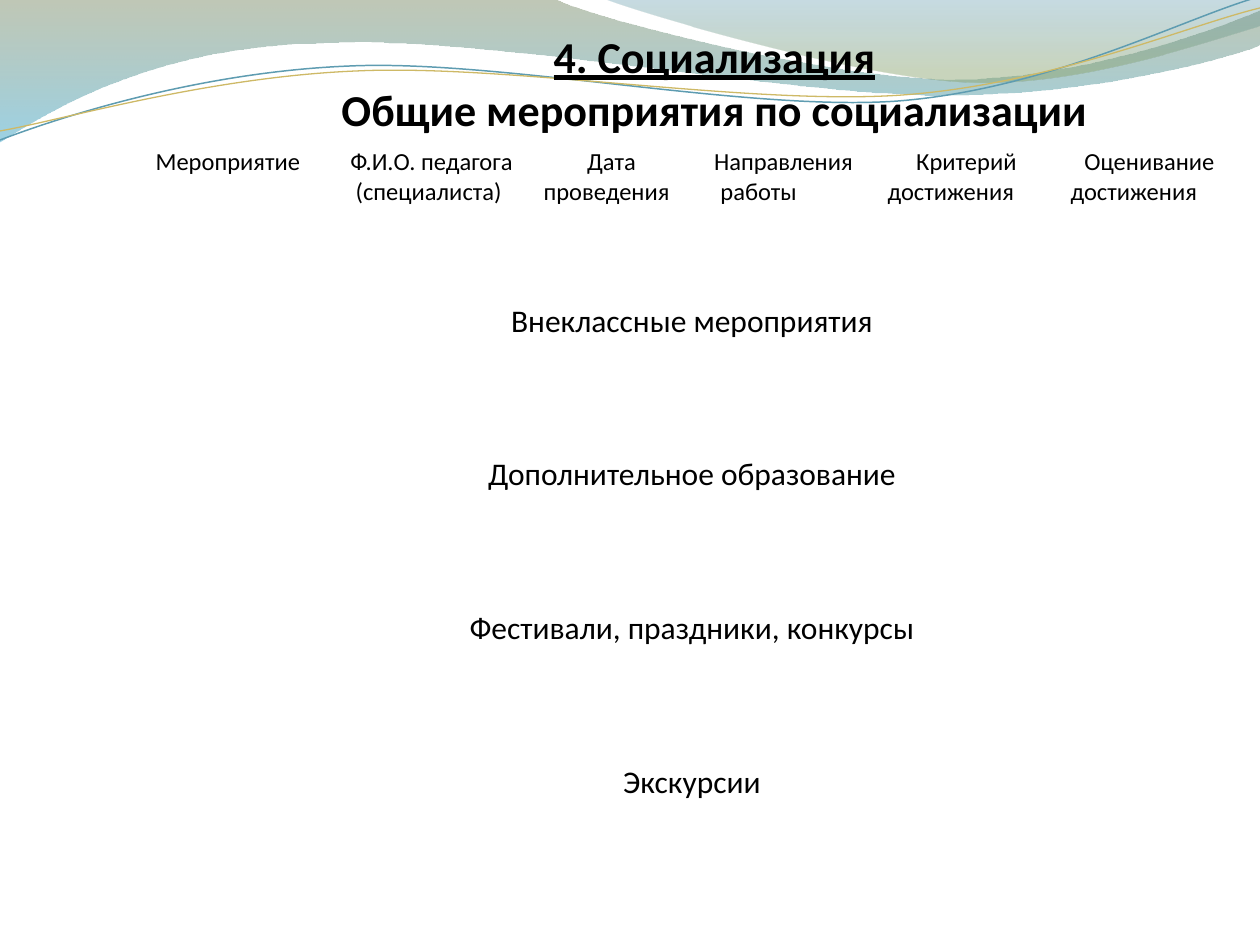
"""Builds the slide with general socialization activities under a wave header."""
from itertools import chain
from lxml.etree import SubElement
from pptx import Presentation
from pptx.dml.color import RGBColor
from pptx.enum.text import MSO_ANCHOR, PP_ALIGN
from pptx.oxml.ns import qn
from pptx.util import Pt

SCALE = 914400 / 126

TITLE_LINES = [("4. Социализация", True), ("Общие мероприятия по социализации", False)]
TITLE_BOX = (198, 35, 1033, 100)
HEADERS = [
    (189, "Мероприятие\t"),
    (199, "Ф.И.О. педагога (специалиста) "),
    (161, "Дата проведения \t"),
    (183, "Направления работы \t"),
    (183, "Критерий достижения \t"),
    (183, "Оценивание достижения \t"),
]
ACTIVITIES = [
    "Внеклассные мероприятия",
    "Дополнительное образование",
    "Фестивали, праздники, конкурсы",
    "Экскурсии",
]
TABLE_LEFT, TABLE_TOP, ROW_HEIGHTS = 143, 141, (155, 622)

BANDS = [
    ([[(0, 0)], [(554, -1)],
      [(600, 21), (837, 79), (955, 79)], [(1075, 79), (1207, 33), (1260, 11)],
      [(1261, 45)],
      [(1239, 55), (1096, 96), (940, 95)], [(784, 95), (481, 35), (324, 43)],
      [(163, 45), (58, 105), (-1, 142)]],
     [(0, "74855E", 45), (100, "4AACCE", 55)]),
    ([[(604, -1)],
      [(641, 14), (859, 78), (969, 82)], [(1079, 87), (1211, 40), (1260, 26)],
      [(1260, 0)]],
     [(0, "45889F", 30), (80, "8AA36D", 45)]),
]
WAVES = [
    ([[(0, 140)], [(60, 117), (199, 72), (349, 66)],
      [(498, 59), (747, 112), (898, 101)], [(1050, 89), (1182, 19), (1258, -3)]],
     "5E9CB1", 0.85),
    ([[(0, 131)], [(59, 121), (207, 77), (357, 71)],
      [(508, 64), (752, 106), (903, 95)], [(1053, 84), (1186, 26), (1260, 8)]],
     "CEB966", 0.75),
]


def px(value):
    return round(value * SCALE)


def color(code):
    return RGBColor.from_string(code)


def add_outline(page, segments, close):
    start, *points = chain.from_iterable(segments)
    builder = page.shapes.build_freeform(*start, scale=SCALE)
    builder.add_line_segments(points, close=close)
    shape = builder.convert_to_shape()
    shape.shadow.inherit = False
    nodes = iter(list(shape._element.iter(qn("a:lnTo"))))
    for segment in segments[1:]:
        steps = [next(nodes) for _ in segment]
        if len(steps) == 3:
            curve = SubElement(steps[0].getparent(), qn("a:cubicBezTo"))
            steps[0].addprevious(curve)
            for step in steps:
                curve.append(step[0])
                step.getparent().remove(step)
    return shape


def add_band(page, segments, stops):
    shape = add_outline(page, segments, True)
    shape.line.fill.background()
    shape.fill.gradient()
    shape.fill.gradient_angle = 270
    for stop, (position, code, _) in zip(shape.fill.gradient_stops, stops):
        stop.position = position / 100
        stop.color.rgb = color(code)
    for node, (_, _, opacity) in zip(shape._element.iter(qn("a:srgbClr")), stops):
        SubElement(node, qn("a:alpha")).set("val", str(opacity * 1000))


def add_wave(page, segments, code, width):
    shape = add_outline(page, segments, False)
    shape.fill.background()
    shape.line.color.rgb = color(code)
    shape.line.width = Pt(width)


def format_paragraph(paragraph, size, bold=False, gap=0):
    paragraph.alignment = PP_ALIGN.CENTER
    paragraph.space_before = Pt(gap)
    font = paragraph.font
    font.name, font.size, font.bold = "Calibri", Pt(size), bold
    font.color.rgb = color("000000")


def place_title(page):
    title = page.shapes.title
    title.left, title.top, title.width, title.height = map(px, TITLE_BOX)
    frame = title.text_frame
    frame.word_wrap = True
    frame.vertical_anchor = MSO_ANCHOR.BOTTOM
    frame.margin_left = frame.margin_right = frame.margin_bottom = 0
    paragraph = frame.paragraphs[0]
    format_paragraph(paragraph, 25.2, bold=True)
    for index, (text, underline) in enumerate(TITLE_LINES):
        if index:
            paragraph.add_line_break()
        span = paragraph.add_run()
        span.text = text
        span.font.underline = underline
    page.shapes._spTree.append(title._element)


def add_activity_table(page):
    widths = [width for width, _ in HEADERS]
    table = page.shapes.add_table(
        len(ROW_HEIGHTS), len(HEADERS), px(TABLE_LEFT), px(TABLE_TOP),
        px(sum(widths)), px(sum(ROW_HEIGHTS))).table
    for column, width in zip(table.columns, widths):
        column.width = px(width)
    for row, height in zip(table.rows, ROW_HEIGHTS):
        row.height = px(height)
    for cell in table.iter_cells():
        cell.fill.background()
    for index, (_, text) in enumerate(HEADERS):
        cell = table.cell(0, index)
        cell.text = text
        format_paragraph(cell.text_frame.paragraphs[0], 14)
    body = table.cell(1, 0)
    body.merge(table.cell(1, len(HEADERS) - 1))
    body.text = "\n".join(ACTIVITIES)
    for index, paragraph in enumerate(body.text_frame.paragraphs):
        format_paragraph(paragraph, 18, gap=65.8 if index else 0)


def main():
    deck = Presentation()
    deck.slide_width, deck.slide_height = px(1260), px(945)
    page = deck.slides.add_slide(deck.slide_layouts[5])
    for band in BANDS:
        add_band(page, *band)
    for wave in WAVES:
        add_wave(page, *wave)
    place_title(page)
    add_activity_table(page)
    deck.save("out.pptx")


if __name__ == "__main__":
    main()
